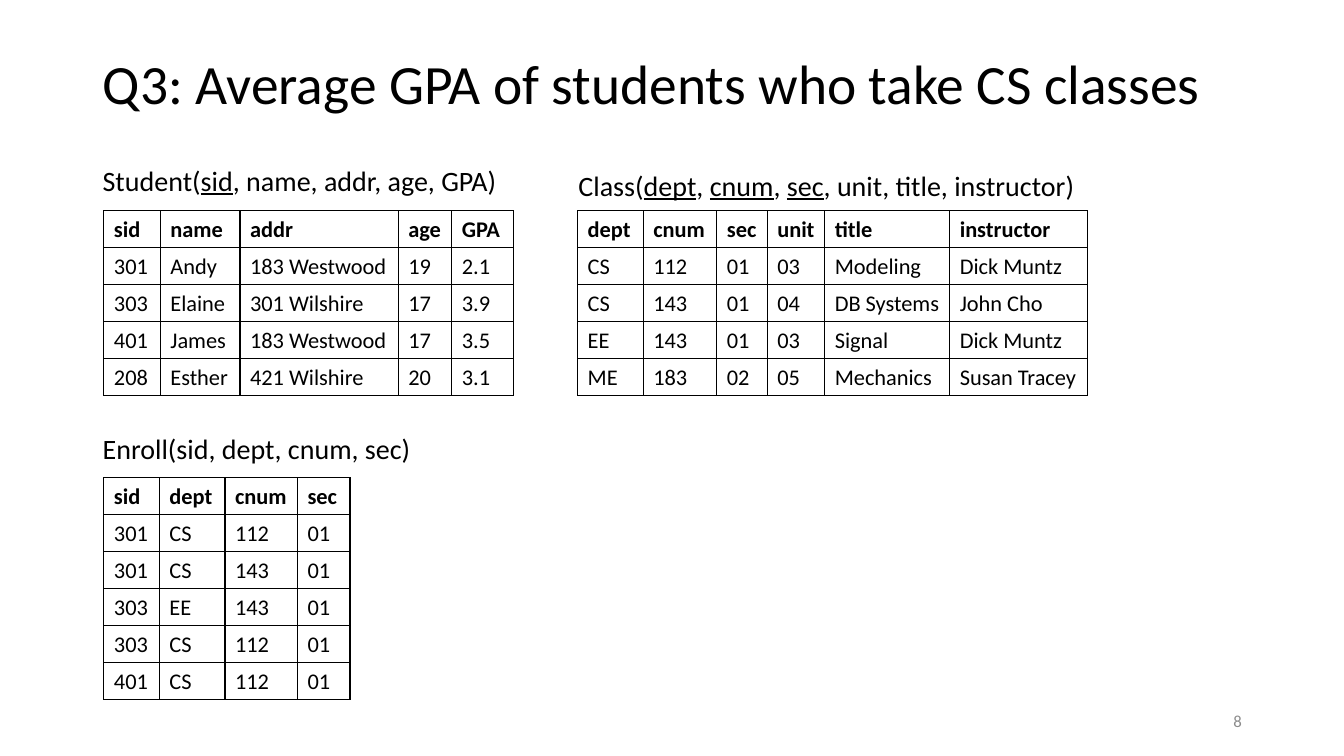
from dataclasses import dataclass

from lxml.etree import SubElement
from pptx import Presentation
from pptx.dml.color import RGBColor
from pptx.enum.text import MSO_ANCHOR as Anchor, MSO_AUTO_SIZE as AutoSize, PP_ALIGN as Align
from pptx.oxml import parse_xml
from pptx.oxml.ns import nsdecls, qn
from pptx.util import Emu, Inches, Pt

BLACK = RGBColor(0x00, 0x00, 0x00)
WHITE = RGBColor(0xFF, 0xFF, 0xFF)
GRAY = RGBColor(0x8C, 0x8C, 0x8C)

# The grid has 100 columns and 100 rows; all lengths below count them.
SLIDE_WIDTH, SLIDE_HEIGHT = Inches(13.33), Inches(7.5)
LEFT_MARGIN = 6.9
TABLE_ROW = 4.89
CAPTION_HEIGHT = 5.73


def across(columns: float) -> Emu:
    return Emu(round(SLIDE_WIDTH * columns / 100))


def down(rows: float) -> Emu:
    return Emu(round(SLIDE_HEIGHT * rows / 100))


@dataclass(frozen=True)
class Box:
    left: float
    top: float
    width: float
    height: float

    def place(self) -> tuple[Emu, Emu, Emu, Emu]:
        return across(self.left), down(self.top), across(self.width), down(self.height)


@dataclass(frozen=True)
class Relation:
    """A captioned table; underscores in the caption enclose key attributes."""
    caption: str
    caption_box: Box
    wrap: bool
    left: float
    top: float
    column_widths: list[float]
    rows: list[list[str]]


RELATIONS = [
    Relation(
        "Student(_sid_, name, addr, age, GPA)",
        Box(LEFT_MARGIN, 20.93, 31.2, CAPTION_HEIGHT), False,
        7.73, 27.87, [4.2, 5.93, 11.78, 3.98, 4.58],
        [["sid", "name", "addr", "age", "GPA"],
         ["301", "Andy", "183 Westwood", "19", "2.1"],
         ["303", "Elaine", "301 Wilshire", "17", "3.9"],
         ["401", "James", "183 Westwood", "17", "3.5"],
         ["208", "Esther", "421 Wilshire", "20", "3.1"]]),
    Relation(
        "Class(_dept_, _cnum_, _sec_, unit, title, instructor)",
        Box(42.3, 21.6, 45.08, CAPTION_HEIGHT), True,
        42.98, 27.87, [4.88, 5.48, 3.75, 4.28, 9.3, 10.28],
        [["dept", "cnum", "sec", "unit", "title", "instructor"],
         ["CS", "112", "01", "03", "Modeling", "Dick Muntz"],
         ["CS", "143", "01", "04", "DB Systems", "John Cho"],
         ["EE", "143", "01", "03", "Signal", "Dick Muntz"],
         ["ME", "183", "02", "05", "Mechanics", "Susan Tracey"]]),
    Relation(
        "Enroll(sid, dept, cnum, sec)",
        Box(LEFT_MARGIN, 56.4, 30.15, CAPTION_HEIGHT), True,
        7.73, 63.2, [4.13, 4.88, 5.4, 3.9],
        [["sid", "dept", "cnum", "sec"],
         ["301", "CS", "112", "01"],
         ["301", "CS", "143", "01"],
         ["303", "EE", "143", "01"],
         ["303", "CS", "112", "01"],
         ["401", "CS", "112", "01"]]),
]


def add_run(paragraph, text: str, size: float, color: RGBColor = BLACK, **formats) -> None:
    run = paragraph.add_run()
    run.text = text
    run.font.color.rgb = color
    for name, value in {"name": "Calibri", "size": Pt(size), **formats}.items():
        setattr(run.font, name, value)


def set_borders(cell) -> None:
    properties = cell._tc.get_or_add_tcPr()
    for index, side in enumerate(("lnL", "lnR", "lnT", "lnB")):
        line = parse_xml(f'<a:{side} {nsdecls("a")} w="{Pt(1)}"/>')
        fill = SubElement(line, qn("a:solidFill"))
        SubElement(fill, qn("a:srgbClr"), val=str(BLACK))
        properties.insert(index, line)


def add_caption(slide, relation: Relation) -> None:
    frame = slide.shapes.add_textbox(*relation.caption_box.place()).text_frame
    frame.word_wrap = relation.wrap
    for index, part in enumerate(relation.caption.split("_")):
        add_run(frame.paragraphs[0], part, 20, underline=index % 2 == 1)


def add_relation_table(slide, relation: Relation) -> None:
    box = Box(relation.left, relation.top, sum(relation.column_widths),
              TABLE_ROW * len(relation.rows))
    table = slide.shapes.add_table(
        len(relation.rows), len(relation.column_widths), *box.place()).table
    table.horz_banding = False
    for column, width in zip(table.columns, relation.column_widths):
        column.width = across(width)
    for row_index, values in enumerate(relation.rows):
        for column_index, value in enumerate(values):
            cell = table.cell(row_index, column_index)
            cell.fill.solid()
            cell.fill.fore_color.rgb = WHITE
            set_borders(cell)
            add_run(cell.text_frame.paragraphs[0], value, 16, bold=row_index == 0)


def add_title(slide, text: str) -> None:
    title = slide.shapes.title
    title.left, title.top, title.width, title.height = Box(LEFT_MARGIN, 5.33, 86.25, 12.13).place()
    frame_format = {"auto_size": AutoSize.NONE, "vertical_anchor": Anchor.MIDDLE, "word_wrap": True}
    for name, value in frame_format.items():
        setattr(title.text_frame, name, value)
    paragraph = title.text_frame.paragraphs[0]
    for name, value in {"alignment": Align.LEFT, "line_spacing": 0.9}.items():
        setattr(paragraph, name, value)
    add_run(paragraph, text, 39.6)


def add_page_number(slide, number: str) -> None:
    frame = slide.shapes.add_textbox(*Box(70.65, 92.67, 22.5, 5.33).place()).text_frame
    for name, value in {"word_wrap": True, "vertical_anchor": Anchor.MIDDLE}.items():
        setattr(frame, name, value)
    frame.paragraphs[0].alignment = Align.RIGHT
    add_run(frame.paragraphs[0], number, 12, GRAY)


def main() -> None:
    presentation = Presentation()
    presentation.slide_width, presentation.slide_height = SLIDE_WIDTH, SLIDE_HEIGHT
    slide = presentation.slides.add_slide(presentation.slide_layouts.get_by_name("Title Only"))

    add_title(slide, "Q3: Average GPA of students who take CS classes")
    # Each relation: schema above its sample rows
    for relation in RELATIONS:
        add_caption(slide, relation)
        add_relation_table(slide, relation)
    add_page_number(slide, "8")

    presentation.save("out.pptx")


if __name__ == "__main__":
    main()
